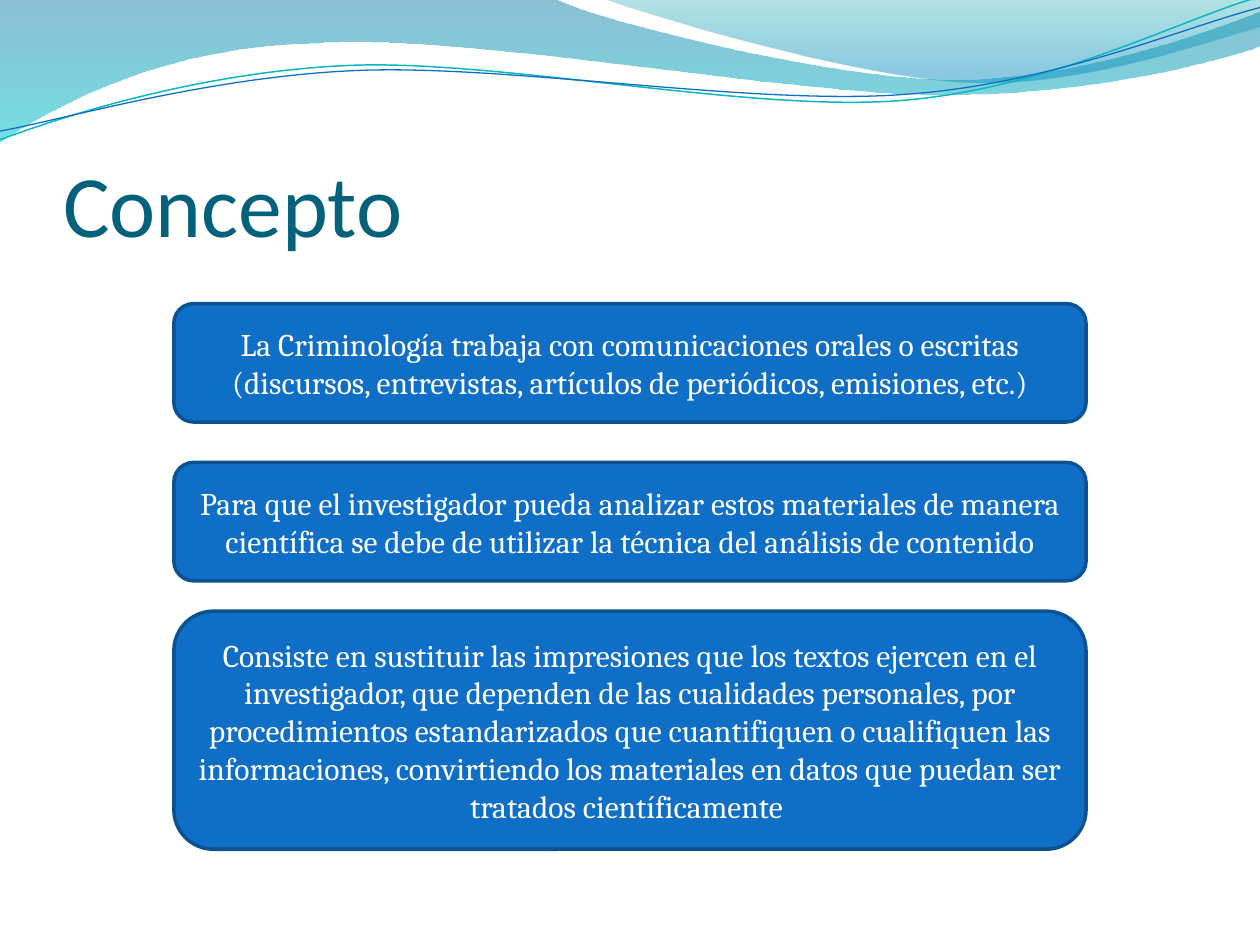
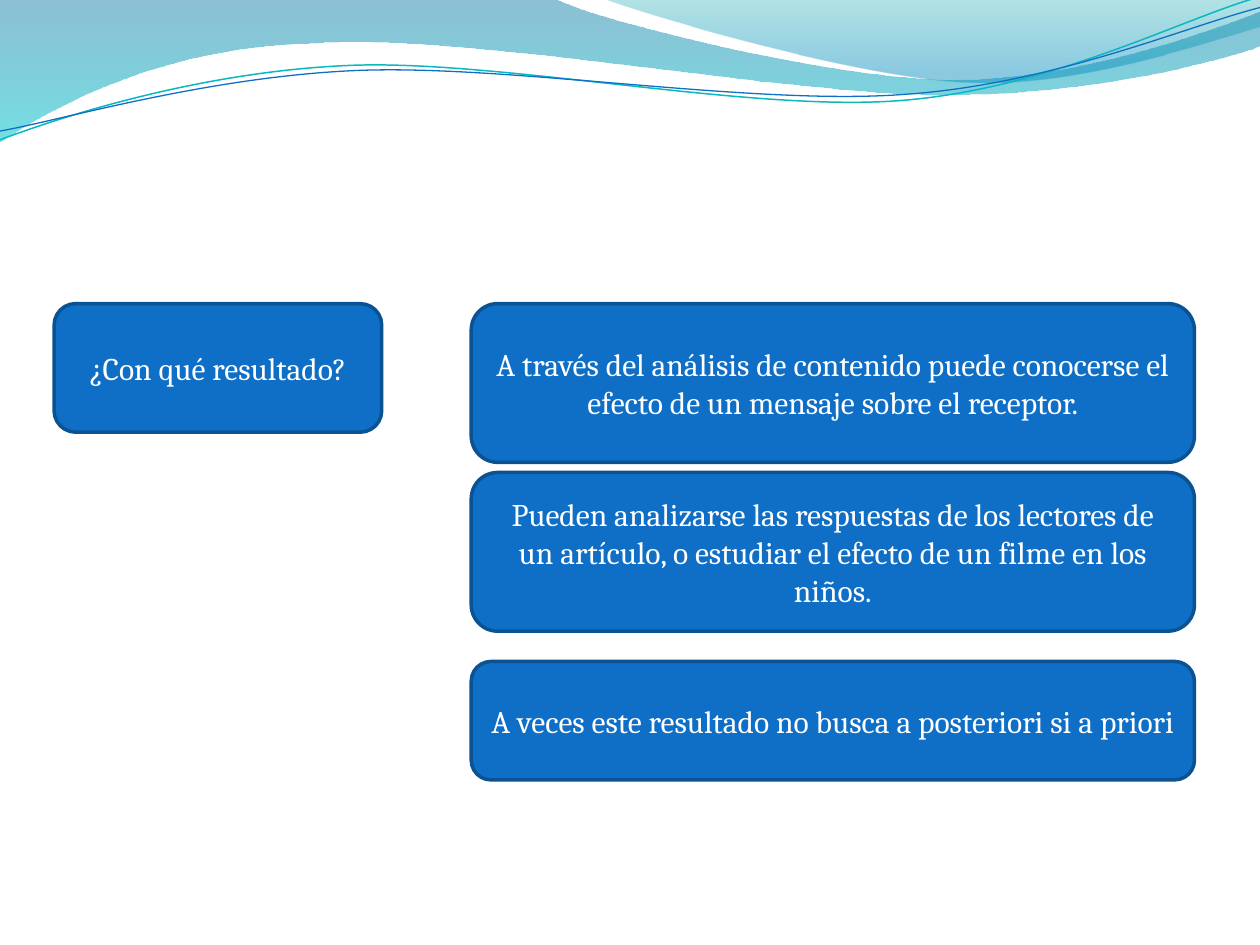
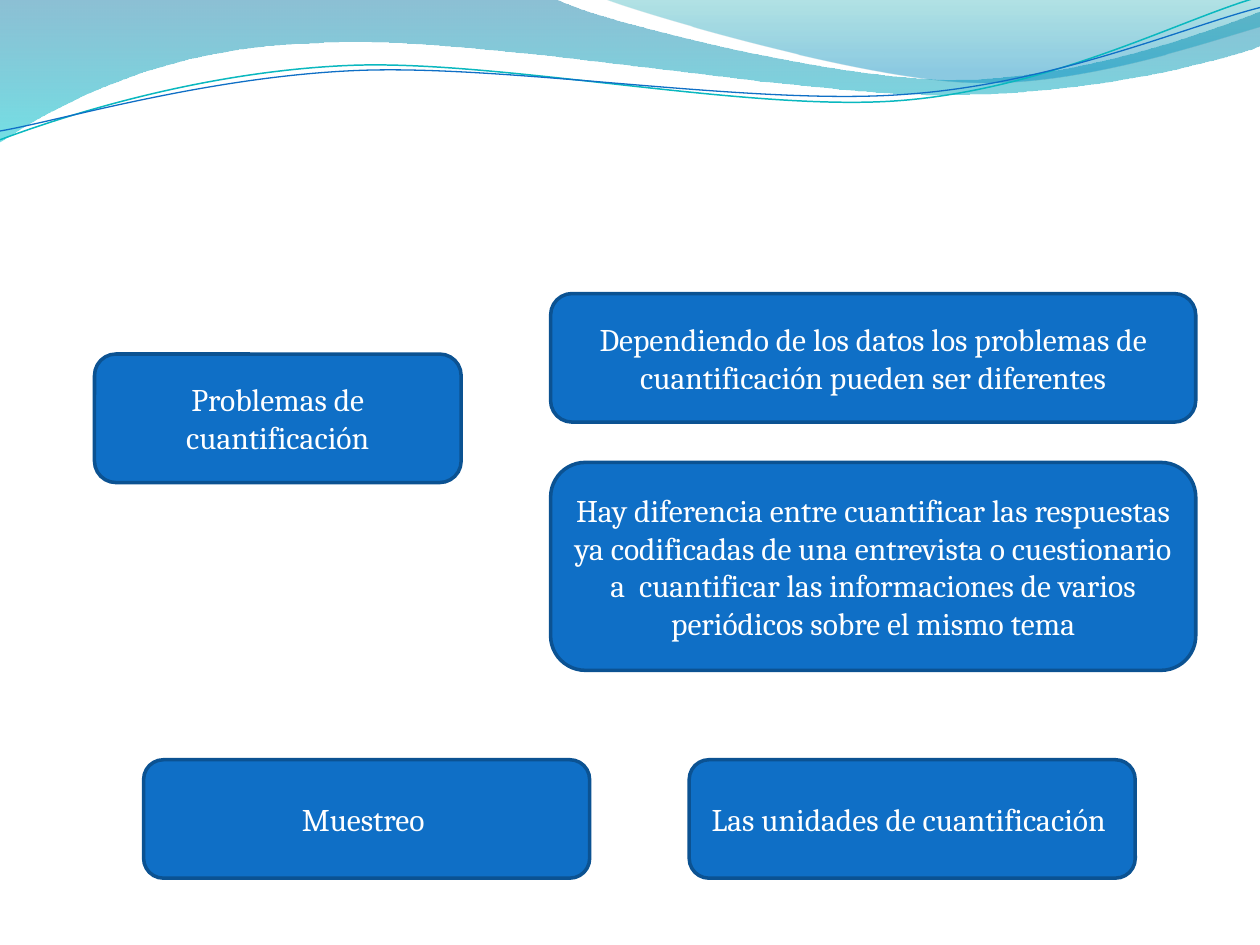
from dataclasses import dataclass

from lxml import etree
from pptx import Presentation, util as u
from pptx.dml.color import RGBColor
from pptx.enum import shapes, text
from pptx.oxml.ns import qn


@dataclass(frozen=True)
class Theme:
    title: str = "04617B"
    card: str = "0F6FC6"
    card_edge: str = "0B5292"
    card_text: str = "FFFFFF"
    teal_line: str = "0AB8BF"
    blue_line: str = "0F6FC6"
    # Gradient stops: position, colour, opacity in percent
    wide_band: tuple = ((0, "0074A1", 45), (1, "00C6CF", 55))
    right_band: tuple = ((0, "00A1A9", 30), (0.8, "008BBF", 45))
    title_font: str = "Calibri"
    body_font: str = "Cambria"
    title_size: int = 50
    body_size: int = 18


@dataclass(frozen=True)
class Box:
    left: float
    top: float
    width: float
    height: float

    def inches(self):
        return [u.Inches(v) for v in (self.left, self.top, self.width, self.height)]


THEME = Theme()
FIRST_HEADER_ID = 101

# Outlines hold a start point, then lines (one point) and Bézier curves (three points).
WIDE_BAND = [
    [(0, 0)], [(4.4, -0.01)],
    [(4.76, 0.17), (6.64, 0.63), (7.58, 0.63)],
    [(8.53, 0.63), (9.58, 0.26), (10, 0.09)], [(10.01, 0.36)],
    [(9.83, 0.44), (8.7, 0.76), (7.46, 0.75)],
    [(6.22, 0.75), (3.82, 0.28), (2.57, 0.34)],
    [(1.29, 0.36), (0.46, 0.83), (-0.01, 1.13)], [(0, 0)],
]
RIGHT_BAND = [
    [(4.79, -0.01)],
    [(5.09, 0.11), (6.82, 0.62), (7.69, 0.65)],
    [(8.56, 0.69), (9.61, 0.32), (10, 0.21)], [(10, 0)], [(4.79, -0.01)],
]
TEAL_WAVE = [
    [(0, 1.11)],
    [(0.48, 0.93), (1.58, 0.57), (2.77, 0.52)],
    [(3.95, 0.47), (5.93, 0.89), (7.13, 0.8)],
    [(8.33, 0.71), (9.38, 0.15), (9.98, -0.02)],
]
BLUE_WAVE = [
    [(0, 1.04)],
    [(0.47, 0.96), (1.64, 0.61), (2.83, 0.56)],
    [(4.03, 0.51), (5.97, 0.84), (7.17, 0.75)],
    [(8.36, 0.67), (9.41, 0.21), (10, 0.06)],
]


def color(code):
    return RGBColor.from_string(code)


def bend_lines(shape, segments):
    """Join each run of three line steps that stands for a curve into one Bézier step."""
    steps = iter(list(shape.element.iter(qn("a:lnTo"))))
    for segment in segments:
        first, *others = [next(steps) for _ in segment]
        if others:
            first.tag = qn("a:cubicBezTo")
        for step in others:
            first.append(step[0])
            step.getparent().remove(step)


def draw_outline(slide, outline, closed):
    points = [(u.Inches(x), u.Inches(y)) for segment in outline for x, y in segment]
    builder = slide.shapes.build_freeform(*points[0])
    builder.add_line_segments(points[1:], close=closed)
    shape = builder.convert_to_shape()
    bend_lines(shape, outline[1:])
    shape.shadow.inherit = False
    return shape


def draw_band(slide, outline, stops):
    band = draw_outline(slide, outline, closed=True)
    band.line.fill.background()
    band.fill.gradient()
    band.fill.gradient_angle = 270
    for stop, (position, code, opacity) in zip(band.fill.gradient_stops, stops):
        stop.position = position
        stop.color.rgb = color(code)
        etree.SubElement(stop.element[0], qn("a:alpha"), val=str(opacity * 1000))
    return band


def draw_wave(slide, outline, code, width):
    wave = draw_outline(slide, outline, closed=False)
    wave.fill.background()
    wave.line.color.rgb = color(code)
    wave.line.width = u.Pt(width)
    return wave


def add_header_to_master(slide):
    """Draw the header on a slide, then move it to the master that all slides share."""
    header = [
        draw_band(slide, WIDE_BAND, THEME.wide_band),
        draw_band(slide, RIGHT_BAND, THEME.right_band),
        draw_wave(slide, TEAL_WAVE, THEME.teal_line, 0.85),
        draw_wave(slide, BLUE_WAVE, THEME.blue_line, 0.75),
    ]
    master = slide.slide_layout.slide_master
    for number, part in enumerate(header, FIRST_HEADER_ID):
        next(part.element.iter(qn("p:cNvPr"))).set("id", str(number))
        master.shapes.element.append(part.element)


def write(frame, words, font, size, code):
    frame.word_wrap = True
    frame.text = words
    run_font = frame.paragraphs[0].runs[0].font
    run_font.name, run_font.size = font, u.Pt(size)
    run_font.color.rgb = color(code)


def add_title(slide, box, words):
    frame = slide.shapes.add_textbox(*box.inches()).text_frame
    frame.margin_left = frame.margin_right = frame.margin_bottom = 0
    frame.vertical_anchor = text.MSO_ANCHOR.BOTTOM
    write(frame, words, THEME.title_font, THEME.title_size, THEME.title)


def add_card(slide, box, words):
    card = slide.shapes.add_shape(shapes.MSO_SHAPE.ROUNDED_RECTANGLE, *box.inches())
    card.shadow.inherit = False
    card.fill.solid()
    card.fill.fore_color.rgb = color(THEME.card)
    card.line.color.rgb = color(THEME.card_edge)
    card.line.width = u.Pt(2)
    frame = card.text_frame
    frame.vertical_anchor = text.MSO_ANCHOR.MIDDLE
    write(frame, words, THEME.body_font, THEME.body_size, THEME.card_text)
    frame.paragraphs[0].alignment = text.PP_ALIGN.CENTER


def add_card_column(slide, box, cards):
    """Place cards given as (offset from the top of the box, height, words)."""
    for offset, height, words in cards:
        add_card(slide, Box(box.left, box.top + offset, box.width, height), words)


def add_card_row(slide, box, gap, labels):
    width = (box.width - gap * (len(labels) - 1)) / len(labels)
    for index, label in enumerate(labels):
        left = box.left + index * (width + gap)
        add_card(slide, Box(left, box.top, width, box.height), label)


def build_concept(slide):
    add_title(slide, Box(0.5, 0.77, 9.08, 1.25), "Concepto")
    add_card_column(slide, Box(1.38, 2.41, 7.24, 4.33), [
        (0, 0.94, "La Criminología trabaja con comunicaciones orales o escritas "
                  "(discursos, entrevistas, artículos de periódicos, emisiones, etc.)"),
        (1.26, 0.94, "Para que el investigador pueda analizar estos materiales de manera "
                     "científica se debe de utilizar la técnica del análisis de contenido"),
        (2.44, 1.89, "Consiste en sustituir las impresiones que los textos ejercen en el "
                     "investigador, que dependen de las cualidades personales, por "
                     "procedimientos estandarizados que cuantifiquen o cualifiquen las "
                     "informaciones, convirtiendo los materiales en datos que puedan ser "
                     "tratados científicamente "),
    ])


def build_result(slide):
    add_card(slide, Box(0.43, 2.41, 2.6, 1.02), "¿Con qué resultado?")
    add_card_column(slide, Box(3.74, 2.41, 5.74, 3.78), [
        (0, 1.26, "A través del análisis de contenido puede conocerse el efecto de un "
                  "mensaje sobre el receptor."),
        (1.34, 1.26, "Pueden analizarse las respuestas de los lectores de un artículo, o "
                     "estudiar el efecto de un filme en los niños."),
        (2.84, 0.94, "A veces este resultado no busca a posteriori si a priori "),
    ])


def build_quantification(slide):
    add_card(slide, Box(0.75, 2.81, 2.91, 1.02), "Problemas de cuantificación")
    add_card_column(slide, Box(4.37, 2.33, 5.12, 2.99), [
        (0, 1.02, "Dependiendo de los datos los problemas de cuantificación pueden ser "
                  "diferentes"),
        (1.34, 1.65, "Hay diferencia entre cuantificar las respuestas ya codificadas de una "
                     "entrevista o cuestionario a  cuantificar las informaciones de varios "
                     "periódicos sobre el mismo tema"),
    ])
    add_card_row(slide, Box(1.14, 6.03, 7.87, 0.94), 0.79,
                 ["Muestreo ", "Las unidades de cuantificación "])


def main():
    deck = Presentation()
    deck.slide_width, deck.slide_height = u.Inches(10), u.Inches(7.5)
    blank = deck.slide_layouts[6]
    builders = (build_concept, build_result, build_quantification)
    slides = [deck.slides.add_slide(blank) for _ in builders]
    add_header_to_master(slides[0])
    for build, slide in zip(builders, slides):
        build(slide)
    deck.save("out.pptx")


if __name__ == "__main__":
    main()
